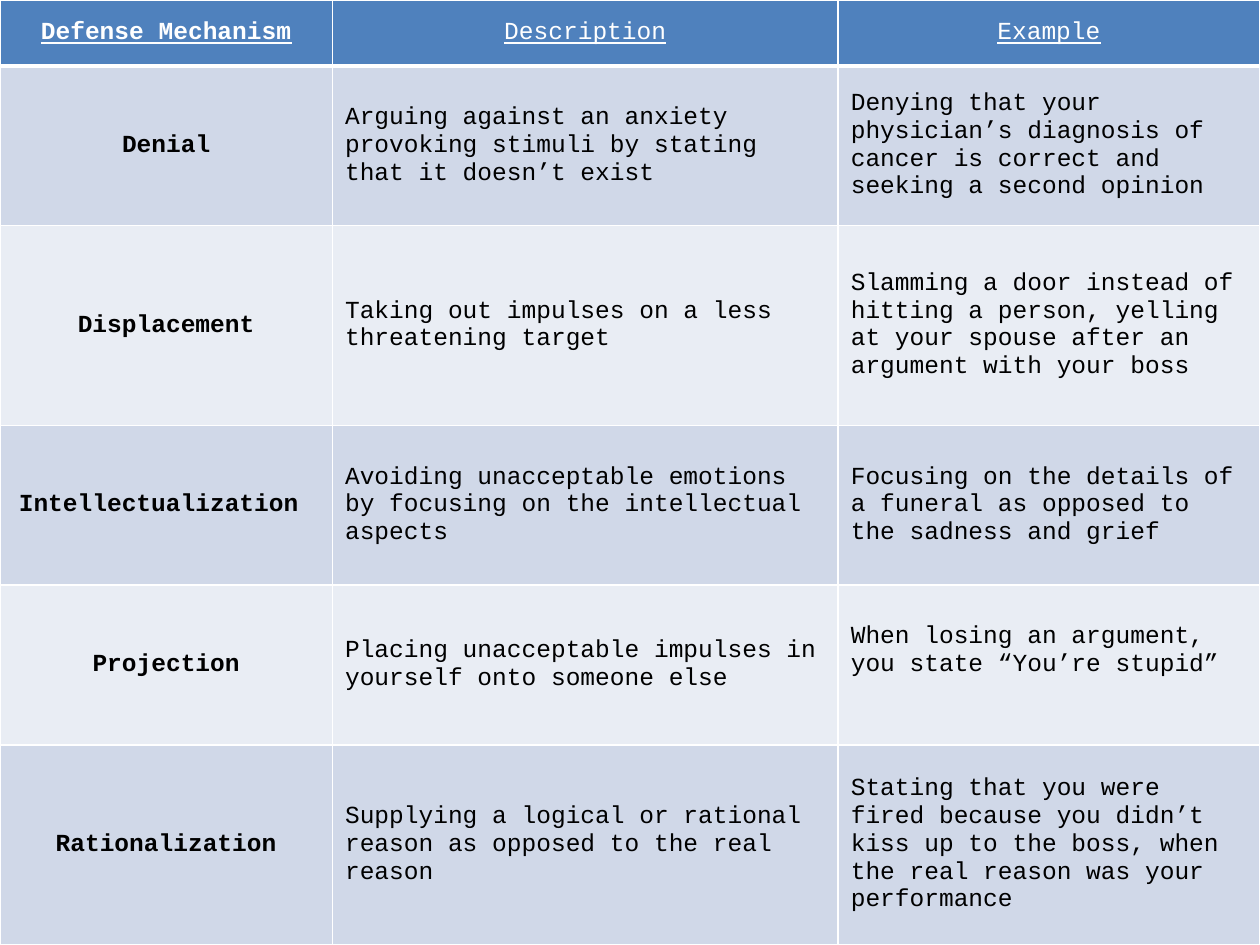
import pptx
import pptx.util
import pptx.dml.color
import pptx.enum.text
import pptx.oxml
import pptx.oxml.ns

Pt = pptx.util.Pt
RGB = pptx.dml.color.RGBColor
ALIGN = pptx.enum.text.PP_ALIGN
MIDDLE = pptx.enum.text.MSO_ANCHOR.MIDDLE

BLUE = RGB(0x4F, 0x81, 0xBD)
BANDS = [RGB(0xE9, 0xED, 0xF4), RGB(0xD0, 0xD8, 0xE8)]
WHITE = RGB(0xFF, 0xFF, 0xFF)
BLACK = RGB(0, 0, 0)
FONT = "Courier New"

COLS = [190, 289, 241]
ROWS = [37.7, 91.3, 114.2, 91.3, 91.3, 114.2]
TEXTS = [
    ("Defense Mechanism", "Description", "Example"),
    ("Denial",
     "Arguing against an anxiety provoking stimuli by stating that it doesn’t exist",
     "Denying that your physician’s diagnosis of cancer is correct and seeking a second opinion"),
    ("Displacement",
     "Taking out impulses on a less threatening target",
     "Slamming a door instead of hitting a person, yelling at your spouse after an argument with your boss"),
    ("Intellectualization ",
     "Avoiding unacceptable emotions by focusing on the intellectual aspects",
     "Focusing on the details of a funeral as opposed to the sadness and grief"),
    ("Projection",
     "Placing unacceptable impulses in yourself onto someone else",
     "When losing an argument, you state “You’re stupid”"),
    ("Rationalization",
     "Supplying a logical or rational reason as opposed to the real reason",
     "Stating that you were fired because you didn’t kiss up to the boss, when the real reason was your performance"),
]


def add_edges(cell, low):
    """Rule the cell in white; low is the width of its bottom edge."""
    props = cell._tc.get_or_add_tcPr()
    widths = {"L": 1, "R": 1, "T": 1, "B": low}
    for spot, (side, width) in enumerate(widths.items()):
        props.insert(spot, pptx.oxml.parse_xml(
            f'<a:ln{side} {pptx.oxml.ns.nsdecls("a")} w="{Pt(width)}">'
            f'<a:solidFill><a:srgbClr val="{WHITE}"/></a:solidFill></a:ln{side}>'))


def fill_cell(cell, text, row, col):
    head = row == 0
    cell.text = text
    cell.vertical_anchor = MIDDLE
    cell.fill.solid()
    cell.fill.fore_color.rgb = BLUE if head else BANDS[row % 2]
    add_edges(cell, 3 if head else 1)

    para = cell.text_frame.paragraphs[0]
    para.alignment = ALIGN.CENTER if head or col == 0 else ALIGN.LEFT
    font = para.font
    font.name = FONT
    font.size = Pt(14)
    font.bold = col == 0
    font.underline = head
    font.color.rgb = WHITE if head else BLACK


def add_grid(slide, left, top, width, height):
    grid = slide.shapes.add_table(
        len(ROWS), len(COLS), Pt(left), Pt(top), Pt(width), Pt(height)).table
    for col, share in zip(grid.columns, COLS):
        col.width = Pt(width * share / sum(COLS))
    for row, share in zip(grid.rows, ROWS):
        row.height = Pt(height * share / sum(ROWS))
    for r, line in enumerate(TEXTS):
        for c, text in enumerate(line):
            fill_cell(grid.cell(r, c), text, r, c)
    # The projection example sits half a line above the middle
    grid.cell(4, 2).margin_bottom = Pt(19.6)


def main():
    deck = pptx.Presentation()
    deck.slide_width, deck.slide_height = Pt(720), Pt(540)
    slide = deck.slides.add_slide(deck.slide_layouts[6])
    add_grid(slide, 0, 0, 720, 540)
    deck.save("out.pptx")


if __name__ == "__main__":
    main()
